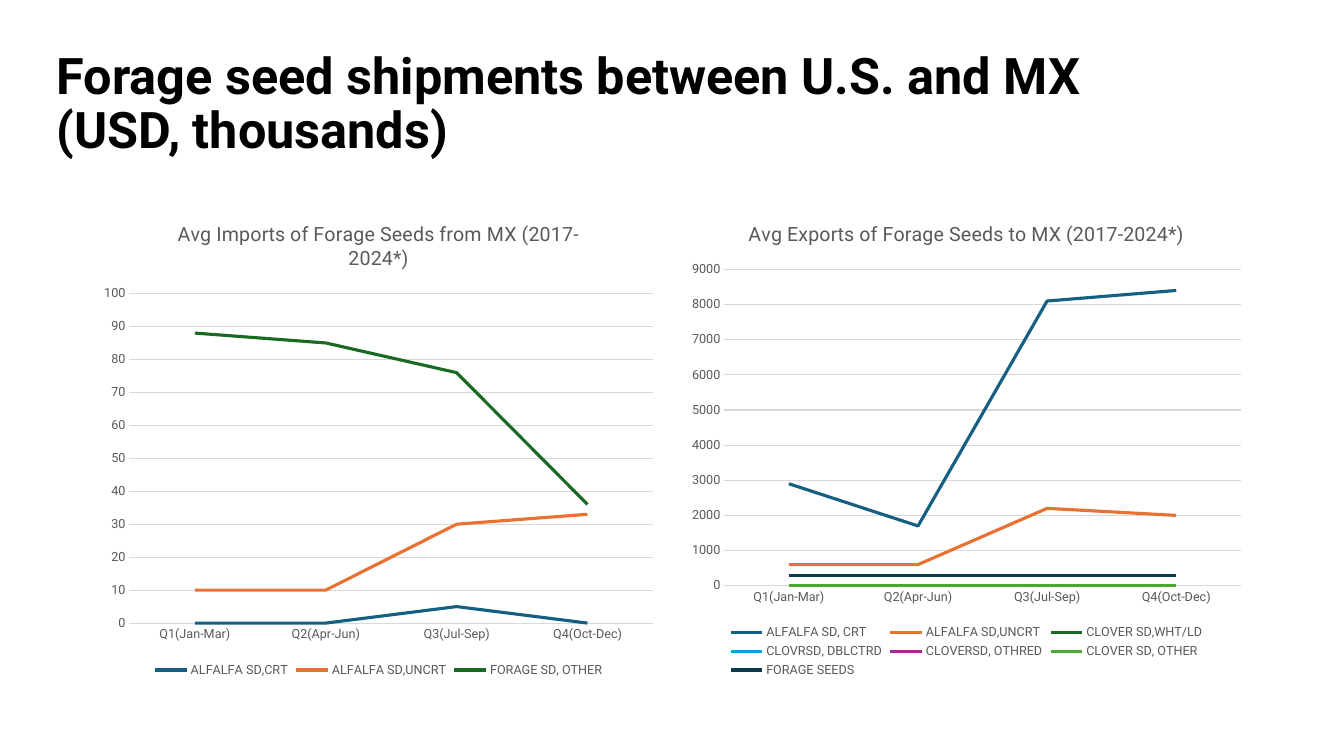
import pptx
import pptx.chart.data
import pptx.dml.color
import pptx.enum.chart
import pptx.enum.text
import pptx.util
from pptx.util import Inches

FONT = "Roboto"
COLORS = {
    "black": "000000",
    "label": "595959",
    "grid": "D9D9D9",
    "series": ["156082", "E97132", "196B24", "0F9ED5", "A02B93", "4EA72E", "0D3A4E"],
}
QUARTERS = ["Q1(Jan-Mar)", "Q2(Apr-Jun)", "Q3(Jul-Sep)", "Q4(Oct-Dec)"]
IMPORTS = {
    "ALFALFA SD,CRT": [0, 0, 5, 0],
    "ALFALFA SD,UNCRT": [10, 10, 30, 33],
    "FORAGE SD, OTHER": [88, 85, 76, 36],
}
EXPORTS = {
    "ALFALFA SD, CRT": [2900, 1700, 8100, 8400],
    "ALFALFA SD,UNCRT": [600, 600, 2200, 2000],
    "CLOVER SD,WHT/LD": [0] * 4,
    "CLOVRSD, DBLCTRD": [0] * 4,
    "CLOVERSD, OTHRED": [0] * 4,
    "CLOVER SD, OTHER": [0] * 4,
    "FORAGE SEEDS": [300] * 4,
}


def rgb(color):
    """Turn a hex string into a colour."""
    return pptx.dml.color.RGBColor.from_string(color)


def set_font(font, size, color, bold=False):
    """Format a font."""
    font.name = FONT
    font.size = pptx.util.Pt(size)
    font.bold = bold
    font.color.rgb = rgb(color)


def set_line(line, color, width):
    """Format a line."""
    line.color.rgb = rgb(color)
    line.width = pptx.util.Pt(width)


def write_text(frame, text, size, color, bold=False, spacing=None):
    """Write each line of the text as a paragraph."""
    for index, words in enumerate(text.split("\n")):
        para = frame.add_paragraph() if index else frame.paragraphs[0]
        para.line_spacing = spacing
        span = para.add_run()
        span.text = words
        set_font(span.font, size, color, bold)
    return frame.paragraphs


def add_title(page, left, top, width, height):
    """Place the slide title in its box."""
    title = page.shapes.title
    title.left, title.top = Inches(left), Inches(top)
    title.width, title.height = Inches(width), Inches(height)
    frame = title.text_frame
    frame.word_wrap = True
    frame.auto_size = pptx.enum.text.MSO_AUTO_SIZE.NONE
    frame.vertical_anchor = pptx.enum.text.MSO_ANCHOR.MIDDLE
    text = "Forage seed shipments between U.S. and MX\n(USD, thousands)"
    for para in write_text(frame, text, 36, COLORS["black"], bold=True, spacing=0.9):
        para.alignment = pptx.enum.text.PP_ALIGN.LEFT


def add_shipments_chart(page, left, top, width, height, title, shipments, maximum, step):
    """Place a quarterly line chart in its box."""
    data = pptx.chart.data.CategoryChartData()
    data.categories = QUARTERS
    for name, values in shipments.items():
        data.add_series(name, values)
    chart = page.shapes.add_chart(
        pptx.enum.chart.XL_CHART_TYPE.LINE,
        Inches(left), Inches(top), Inches(width), Inches(height), data,
    ).chart
    set_font(chart.font, 10, COLORS["black"])
    chart.has_title = True
    chart.chart_title.include_in_layout = False
    write_text(chart.chart_title.text_frame, title, 14, COLORS["label"])

    chart.has_legend = True
    chart.legend.position = pptx.enum.chart.XL_LEGEND_POSITION.BOTTOM
    chart.legend.include_in_layout = False
    set_font(chart.legend.font, 9, COLORS["label"])

    for axis in (chart.category_axis, chart.value_axis):
        axis.major_tick_mark = pptx.enum.chart.XL_TICK_MARK.NONE
        axis.minor_tick_mark = pptx.enum.chart.XL_TICK_MARK.NONE
        set_font(axis.tick_labels.font, 9, COLORS["label"])
    set_line(chart.category_axis.format.line, COLORS["grid"], 0.75)
    scale = chart.value_axis
    scale.minimum_scale, scale.maximum_scale, scale.major_unit = 0, maximum, step
    scale.format.line.fill.background()
    scale.has_major_gridlines = True
    set_line(scale.major_gridlines.format.line, COLORS["grid"], 0.75)

    plot = chart.plots[0]
    plot.vary_by_categories = False
    for series, color in zip(plot.series, COLORS["series"]):
        series.smooth = False
        set_line(series.format.line, color, 2.25)


def main():
    """Build and save the slide."""
    deck = pptx.Presentation()
    deck.slide_width, deck.slide_height = Inches(13.33), Inches(7.5)
    page = deck.slides.add_slide(deck.slide_layouts.get_by_name("Title Only"))
    add_title(page, 0.46, 0.32, 11.5, 1.45)
    add_shipments_chart(page, 0.92, 2, 5.67, 4.76,
                        "Avg Imports of Forage Seeds from MX (2017-2024*)", IMPORTS, 100, 10)
    add_shipments_chart(page, 6.75, 2, 5.67, 4.76,
                        "Avg Exports of Forage Seeds to MX (2017-2024*)", EXPORTS, 9000, 1000)
    deck.save("out.pptx")


if __name__ == "__main__":
    main()
